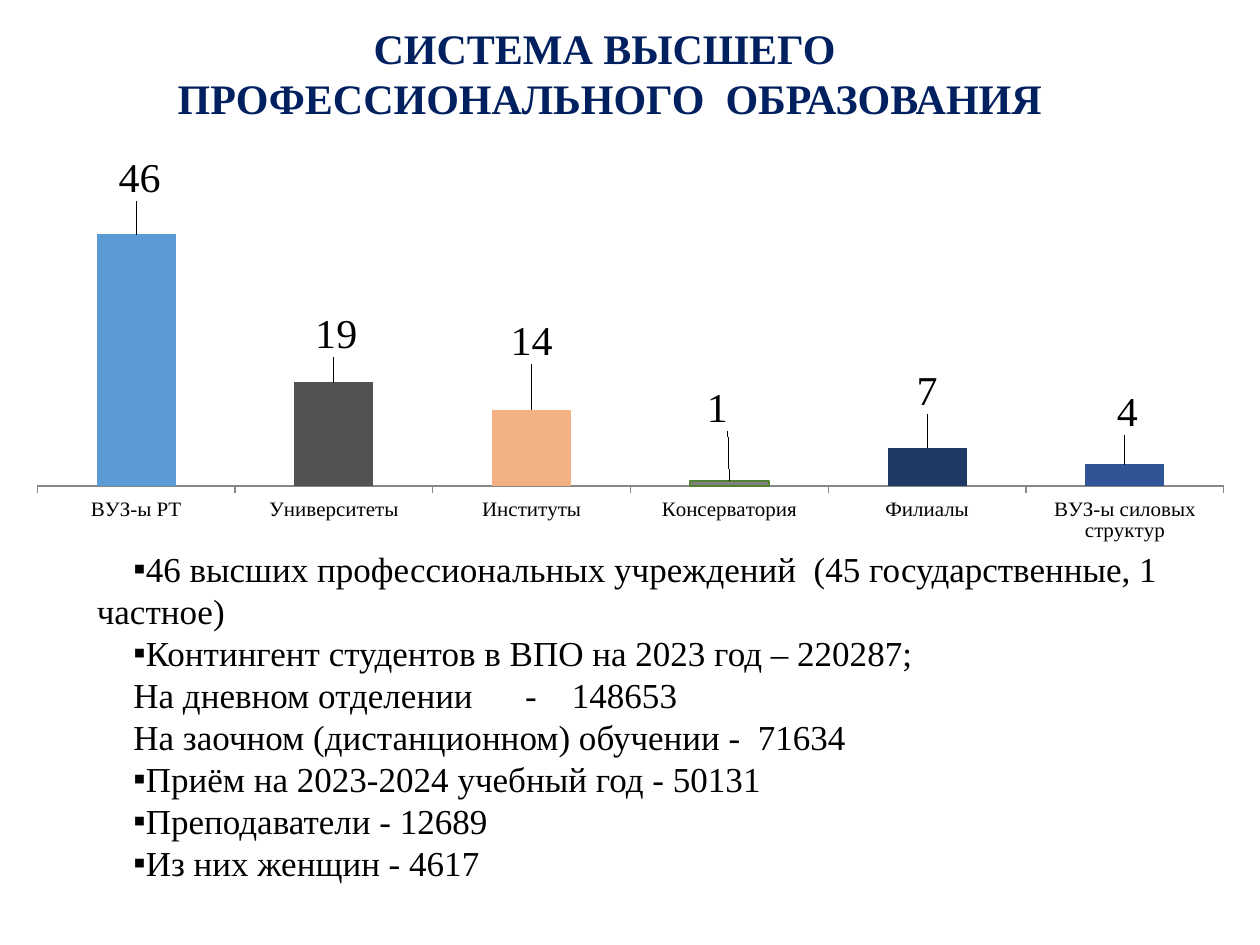
from lxml import etree
from pptx import Presentation
from pptx.chart.data import CategoryChartData
from pptx.dml.color import RGBColor
from pptx.enum.chart import XL_CHART_TYPE, XL_LABEL_POSITION, XL_TICK_MARK
from pptx.enum.text import MSO_ANCHOR, PP_ALIGN
from pptx.oxml.ns import qn
from pptx.util import Inches, Pt

COLUMN = XL_CHART_TYPE.COLUMN_CLUSTERED
OUT_END = XL_LABEL_POSITION.OUTSIDE_END
TICK_OUT = XL_TICK_MARK.OUTSIDE
NO_TICK = XL_TICK_MARK.NONE
CENTER, LEFT = PP_ALIGN.CENTER, PP_ALIGN.LEFT
TOP = MSO_ANCHOR.TOP

WIDE, HIGH = 10, 7.5
FACE = "Times New Roman"
COLORS = {
    "title": "002060", "text": "000000", "axis": "878787", "edge": "548235",
    "blue": "5B9BD5", "dark": "525252", "peach": "F4B183",
    "gray": "808080", "navy": "203864", "royal": "2F5597",
}

TITLE = "СИСТЕМА ВЫСШЕГО \vПРОФЕССИОНАЛЬНОГО  ОБРАЗОВАНИЯ"
# Name, count, bar colour, label shift right and down as shares of the chart
BARS = [
    ("ВУЗ-ы РТ", 46, "blue", 0.003, -0.07),
    ("Университеты", 19, "dark", 0.002, -0.05),
    ("Институты", 14, "peach", 0, -0.1),
    ("Консерватория", 1, "gray", -0.01, -0.11),
    ("Филиалы", 7, "navy", 0, -0.07),
    ("ВУЗ-ы силовых структур", 4, "royal", 0.002, -0.06),
]
# Line and whether it has a bullet
FACTS = [
    ("46 высших профессиональных учреждений  (45 государственные, 1  частное)", True),
    ("Контингент студентов в ВПО на 2023 год – 220287;", True),
    ("На дневном отделении      -    148653", False),
    ("На заочном (дистанционном) обучении -  71634", False),
    ("Приём на 2023-2024 учебный год - 50131", True),
    ("Преподаватели - 12689", True),
    ("Из них женщин - 4617", True),
]


def paint(name):
    return RGBColor.from_string(COLORS[name])


def apply(item, **values):
    for key, value in values.items():
        setattr(item, key, value)


def style(font, size, color="text", bold=False):
    apply(font, name=FACE, size=Pt(size), bold=bold)
    font.color.rgb = paint(color)


def box(left, top, width, height):
    """Turn shares of the slide into lengths."""
    return [Inches(share * side) for share, side in
            ((left, WIDE), (top, HIGH), (width, WIDE), (height, HIGH))]


def add_title(slide):
    shape = slide.shapes.title
    apply(shape, **dict(zip(("left", "top", "width", "height"),
                            box(0.114, 0.017, 0.74, 0.121))))
    frame = shape.text_frame
    apply(frame, text=TITLE, word_wrap=True, vertical_anchor=TOP)
    para = frame.paragraphs[0]
    para.alignment = CENTER
    for run in para.runs:
        style(run.font, 24, "title", True)


def place(parent, index, **values):
    """Put a manual layout into a chart part."""
    for old in parent.findall(qn("c:layout")):
        parent.remove(old)
    layout = etree.Element(qn("c:layout"))
    manual = etree.SubElement(layout, qn("c:manualLayout"))
    for key, value in values.items():
        etree.SubElement(manual, qn("c:" + key)).set("val", str(value))
    parent.insert(index, layout)


def add_bars(slide):
    data = CategoryChartData()
    data.categories = [bar[0] for bar in BARS]
    data.add_series("Series 1", [bar[1] for bar in BARS])
    chart = slide.shapes.add_chart(
        COLUMN, *box(0.02, 0.164, 0.961, 0.441), data).chart
    apply(chart, has_legend=False, has_title=False)
    style(chart.font, 18)

    # Axes
    apply(chart.value_axis, visible=False, has_major_gridlines=False,
          minimum_scale=0, maximum_scale=55)
    axis = chart.category_axis
    apply(axis, major_tick_mark=TICK_OUT, minor_tick_mark=NO_TICK)
    axis.format.line.color.rgb = paint("axis")
    style(axis.tick_labels.font, 12)

    # Bars and their labels
    plot = chart.plots[0]
    apply(plot, gap_width=150, vary_by_categories=False, has_data_labels=True)
    apply(plot.data_labels, show_value=True, position=OUT_END)
    style(plot.data_labels.font, 24)
    for number, (_, _, color, _, _) in enumerate(BARS):
        point = plot.series[0].points[number]
        point.format.fill.solid()
        point.format.fill.fore_color.rgb = paint(color)
        if color == "gray":
            point.format.line.color.rgb = paint("edge")
            point.format.line.width = Pt(1)
        style(point.data_label.font, 24)
        point.data_label.position = OUT_END
    root = plot.series[0]._element
    for label, bar in zip(root.iter(qn("c:dLbl")), BARS):
        place(label, 1, x=bar[3], y=bar[4])
    area = chart._chartSpace.find(".//" + qn("c:plotArea"))
    place(area, 0, layoutTarget="inner", xMode="edge", yMode="edge",
          x=0.01, y=0.05, w=0.98, h=0.74)


def add_facts(slide):
    frame = slide.shapes.add_textbox(*box(0.067, 0.573, 0.898, 0.372)).text_frame
    apply(frame, word_wrap=True, vertical_anchor=TOP)
    for number, (text, marked) in enumerate(FACTS):
        para = frame.add_paragraph() if number else frame.paragraphs[0]
        para.alignment = LEFT
        run = para.add_run()
        run.text = text
        style(run.font, 20)
        props = para._p.get_or_add_pPr()
        props.set("marL", "0")
        props.set("indent", str(Inches(0.29)))
        if marked:
            etree.SubElement(props, qn("a:buFont")).set("typeface", FACE)
            etree.SubElement(props, qn("a:buChar")).set("char", "▪")
        else:
            etree.SubElement(props, qn("a:buNone"))


def main():
    deck = Presentation()
    apply(deck, slide_width=Inches(WIDE), slide_height=Inches(HIGH))
    slide = deck.slides.add_slide(deck.slide_layouts[5])
    add_title(slide)
    add_bars(slide)
    add_facts(slide)
    deck.save("out.pptx")


if __name__ == "__main__":
    main()
